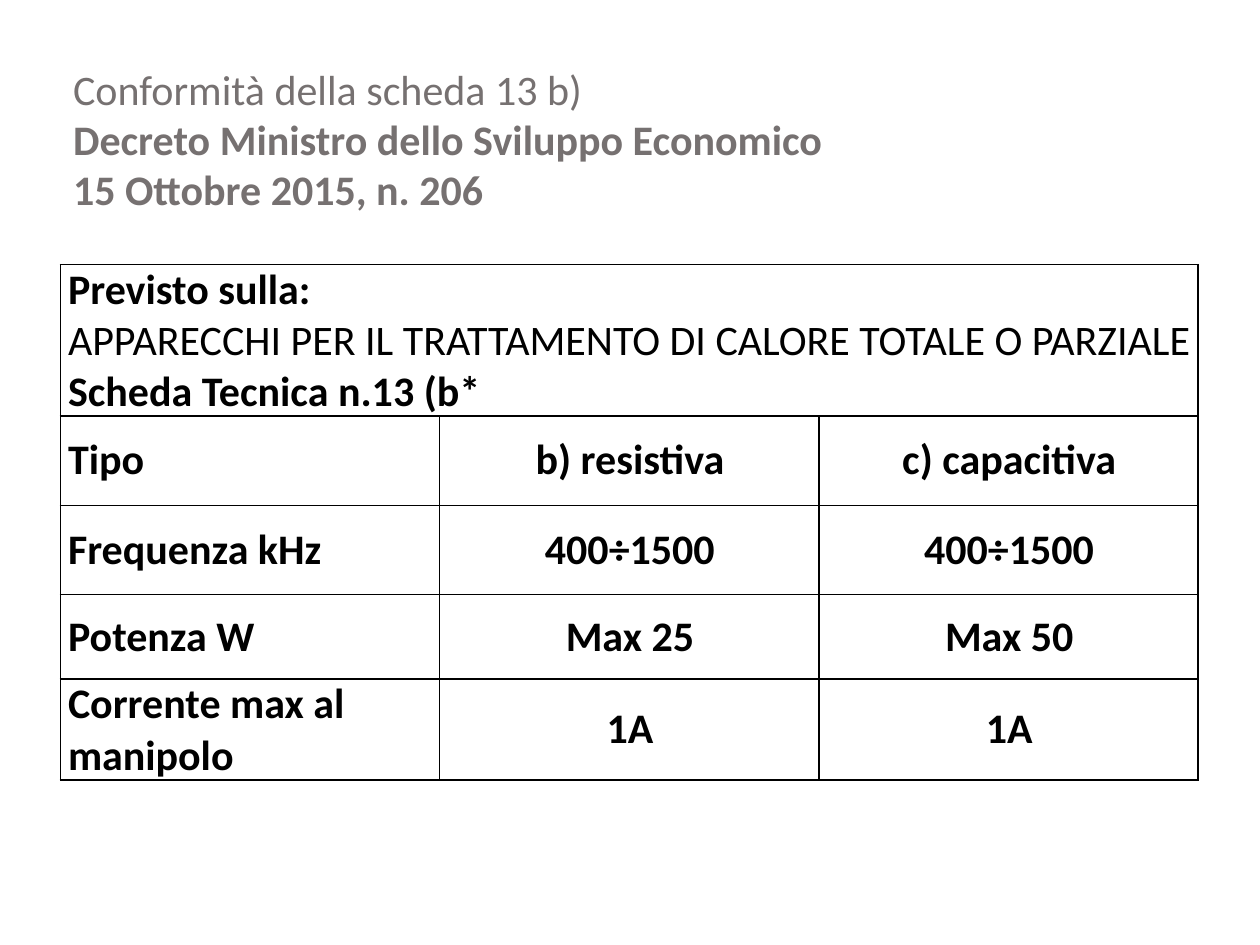
import pptx
import pptx.dml.color
import pptx.enum.text
import pptx.oxml
import pptx.oxml.ns
import pptx.util

Inches, Pt = pptx.util.Inches, pptx.util.Pt
ALIGN = pptx.enum.text.PP_ALIGN
ANCHOR = pptx.enum.text.MSO_ANCHOR

# Each line is (text, bold)
TITLE = [
    ("Conformità della scheda 13 b)", False),
    ("Decreto Ministro dello Sviluppo Economico", True),
    ("15 Ottobre 2015, n. 206", True),
]
HEADER = [
    ("Previsto sulla:", True),
    ("APPARECCHI PER IL TRATTAMENTO DI CALORE TOTALE O PARZIALE", False),
    ("Scheda Tecnica n.13 (b*", True),
]
ROWS = [
    ("Tipo", "b) resistiva", "c) capacitiva"),
    ("Frequenza kHz", "400÷1500", "400÷1500"),
    ("Potenza W", "Max 25", "Max 50"),
    ("Corrente max al manipolo", "1A", "1A"),
]
ROW_HEIGHTS = [0.85, 0.71, 0.71, 0.67, 0.42]
COLUMN_WIDTH = 3.01
LEFT, WIDTH = 0.48, 9.02
GREY, BLACK, WHITE = "767171", "000000", "FFFFFF"
FONT = {"name": "Calibri", "size": Pt(24)}
CELL = {
    "margin_left": Inches(0.06), "margin_right": Inches(0.05),
    "margin_top": 0, "margin_bottom": 0,
    "vertical_anchor": ANCHOR.MIDDLE,
}


def set_all(target, values):
    for name, value in values.items():
        setattr(target, name, value)


def rgb(color):
    return pptx.dml.color.RGBColor.from_string(color)


def write_lines(frame, lines, color, alignment=ALIGN.LEFT):
    for index, (text, bold) in enumerate(lines):
        para = frame.add_paragraph() if index else frame.paragraphs[0]
        para.alignment = alignment
        span = para.add_run()
        span.text = text
        set_all(span.font, {**FONT, "bold": bold})
        span.font.color.rgb = rgb(color)


def add_borders(cell, color, points):
    properties = cell._tc.get_or_add_tcPr()
    for position, side in enumerate(("lnL", "lnR", "lnT", "lnB")):
        line = pptx.oxml.parse_xml(
            f'<a:{side} {pptx.oxml.ns.nsdecls("a")} w="{Pt(points)}">'
            f'<a:solidFill><a:srgbClr val="{color}"/></a:solidFill></a:{side}>'
        )
        properties.insert(position, line)


deck = pptx.Presentation()
set_all(deck, {"slide_width": Inches(10), "slide_height": Inches(7.5)})
page = deck.slides.add_slide(deck.slide_layouts[5])

title = page.shapes.title
set_all(title, {"left": Inches(LEFT), "top": Inches(0.45),
                "width": Inches(WIDTH), "height": Inches(1.31)})
set_all(title.text_frame, {
    "word_wrap": True,
    "auto_size": pptx.enum.text.MSO_AUTO_SIZE.SHAPE_TO_FIT_TEXT,
    "vertical_anchor": ANCHOR.TOP,
})
write_lines(title.text_frame, TITLE, GREY)

table = page.shapes.add_table(
    len(ROW_HEIGHTS), len(ROWS[0]), Inches(LEFT), Inches(2.1),
    Inches(COLUMN_WIDTH * len(ROWS[0])), Inches(sum(ROW_HEIGHTS)),
).table
set_all(table, {"first_row": False, "horz_banding": False})
for row, height in zip(table.rows, ROW_HEIGHTS):
    row.height = Inches(height)

for cell in table.iter_cells():
    set_all(cell, CELL)
    cell.fill.solid()
    cell.fill.fore_color.rgb = rgb(WHITE)
    add_borders(cell, BLACK, 1)

header = table.cell(0, 0)
header.merge(table.cell(0, len(ROWS[0]) - 1))
write_lines(header.text_frame, HEADER, BLACK)
for row_index, values in enumerate(ROWS, start=1):
    for column, text in enumerate(values):
        write_lines(table.cell(row_index, column).text_frame, [(text, True)],
                    BLACK, ALIGN.CENTER if column else ALIGN.LEFT)

deck.save("out.pptx")
